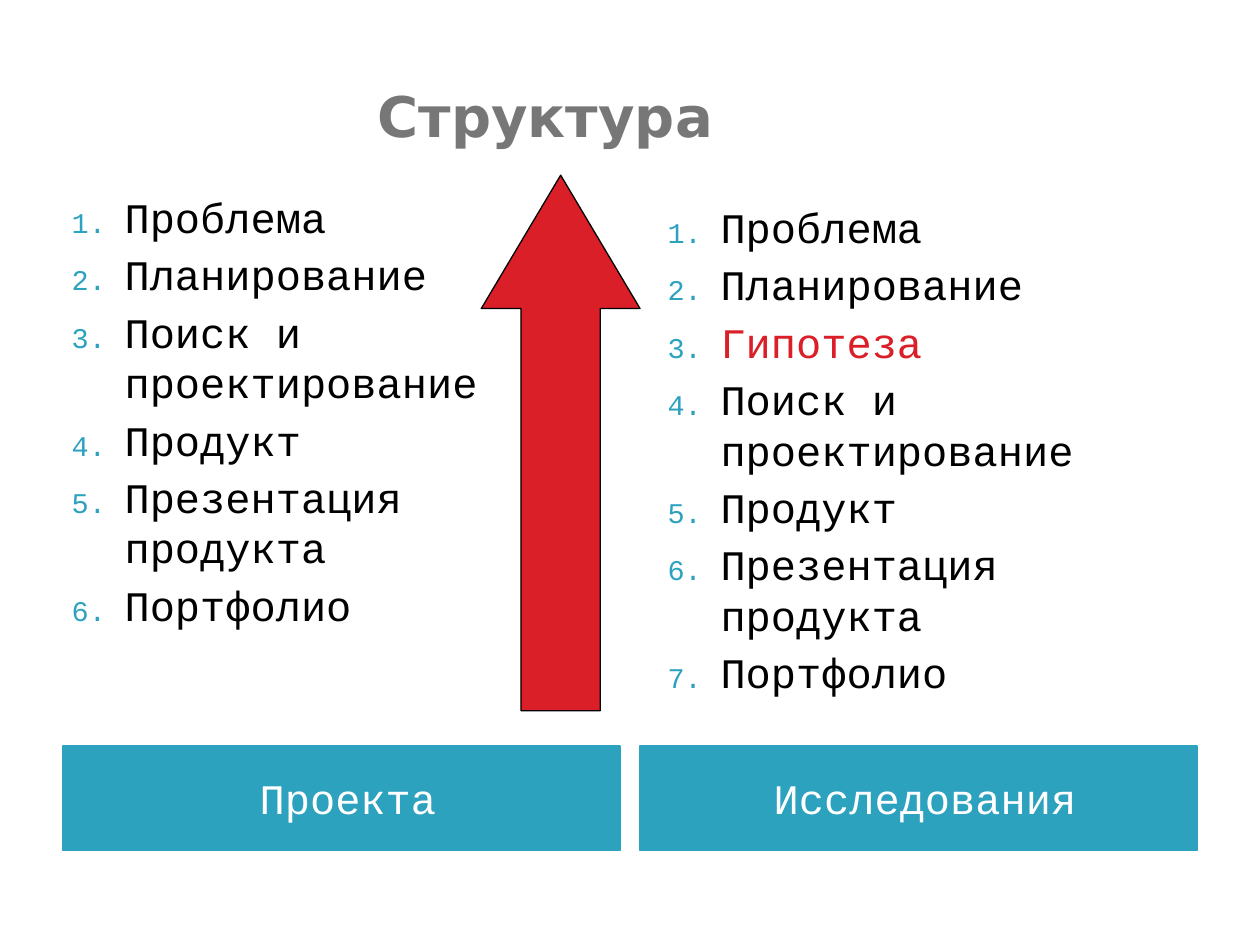
import pptx
import pptx.dml.color
import pptx.enum.shapes
import pptx.enum.text
import pptx.oxml.ns
import pptx.util
from dataclasses import dataclass
from lxml import etree

Inches = pptx.util.Inches
Pt = pptx.util.Pt
Shape = pptx.enum.shapes.MSO_SHAPE
Align = pptx.enum.text.PP_ALIGN
Anchor = pptx.enum.text.MSO_ANCHOR


@dataclass(frozen=True)
class Theme:
    teal: str = "2DA2BF"
    red: str = "DA1F28"
    gray: str = "777777"
    black: str = "000000"
    white: str = "FFFFFF"
    body_font: str = "Courier New"
    title_font: str = "DejaVu Sans"
    body_size: int = 24
    title_size: int = 32
    line_width: float = 0.75
    number_percent: int = 68
    item_gap: int = 4


def rgb(value):
    return pptx.dml.color.RGBColor.from_string(value)


class SlideBuilder:
    def __init__(self, slide, theme):
        self.slide = slide
        self.theme = theme

    def style(self, para, color, font=None, size=None, bold=False):
        for span in para.runs:
            span.font.name = font or self.theme.body_font
            span.font.size = Pt(size or self.theme.body_size)
            span.font.bold = bold
            span.font.color.rgb = rgb(color)

    def text_box(self, left, top, width, height):
        box = self.slide.shapes.add_textbox(
            Inches(left), Inches(top), Inches(width), Inches(height))
        box.text_frame.word_wrap = True
        return box

    def shape(self, kind, left, top, width, height, fill, line):
        shape = self.slide.shapes.add_shape(
            kind, Inches(left), Inches(top), Inches(width), Inches(height))
        shape.shadow.inherit = False
        shape.fill.solid()
        shape.fill.fore_color.rgb = rgb(fill)
        shape.line.color.rgb = rgb(line)
        shape.line.width = Pt(self.theme.line_width)
        return shape

    def title(self, text, left, top, width, height):
        frame = self.text_box(left, top, width, height).text_frame
        frame.auto_size = pptx.enum.text.MSO_AUTO_SIZE.SHAPE_TO_FIT_TEXT
        frame.text = text
        para = frame.paragraphs[0]
        para.alignment = Align.CENTER
        self.style(para, self.theme.gray, self.theme.title_font,
                   self.theme.title_size, bold=True)

    def label(self, text, left, top, width, height):
        box = self.shape(Shape.RECTANGLE, left, top, width, height,
                         self.theme.teal, self.theme.teal)
        frame = box.text_frame
        frame.word_wrap = True
        frame.vertical_anchor = Anchor.MIDDLE
        frame.margin_left = Inches(0.2)
        frame.text = text
        para = frame.paragraphs[0]
        para.alignment = Align.CENTER
        self.style(para, self.theme.white)

    def number(self, para):
        qn = pptx.oxml.ns.qn
        properties = para._p.get_or_add_pPr()
        properties.set("marL", str(Inches(0.54)))
        properties.set("indent", str(Inches(-0.42)))
        color = etree.SubElement(properties, qn("a:buClr"))
        etree.SubElement(color, qn("a:srgbClr"), val=self.theme.teal)
        etree.SubElement(properties, qn("a:buSzPct"),
                         val=str(self.theme.number_percent * 1000))
        etree.SubElement(properties, qn("a:buFont"), typeface=self.theme.body_font)
        etree.SubElement(properties, qn("a:buAutoNum"), type="arabicPeriod")

    def numbered_list(self, items, left, top, width, height, highlight=None):
        frame = self.text_box(left, top, width, height).text_frame
        frame.text = "\n".join(items)
        for index, para in enumerate(frame.paragraphs):
            self.number(para)
            if index:
                para.space_before = Pt(self.theme.item_gap)
            marked = para.text == highlight
            self.style(para, self.theme.red if marked else self.theme.black)

    def up_arrow(self, left, top, width, height):
        arrow = self.shape(Shape.UP_ARROW, left, top, width, height,
                           self.theme.red, self.theme.black)
        arrow.adjustments[0] = 0.5
        arrow.adjustments[1] = 0.84


def main():
    deck = pptx.Presentation()
    deck.slide_width = Inches(10)
    deck.slide_height = Inches(7.5)
    page = SlideBuilder(deck.slides.add_slide(deck.slide_layouts[6]), Theme())

    column_width = 4.42
    hypothesis = "Гипотеза"
    project_steps = ["Проблема", "Планирование", "Поиск и проектирование",
                     "Продукт", "Презентация продукта", "Портфолио"]
    research_steps = project_steps[:2] + [hypothesis] + project_steps[2:]

    for text, left in (("Проекта", 0.5), ("Исследования", 5.08)):
        page.label(text, left, 5.92, column_width, 0.83)
    page.numbered_list(project_steps, 0.35, 1.47, column_width, 4.31)
    page.numbered_list(research_steps, 5.08, 1.55, column_width, 4.31, hypothesis)
    page.title("Структура", 0.67, 0.6, 7.32, 0.63)
    page.up_arrow(3.82, 1.39, 1.26, 4.25)

    deck.save("out.pptx")


if __name__ == "__main__":
    main()
